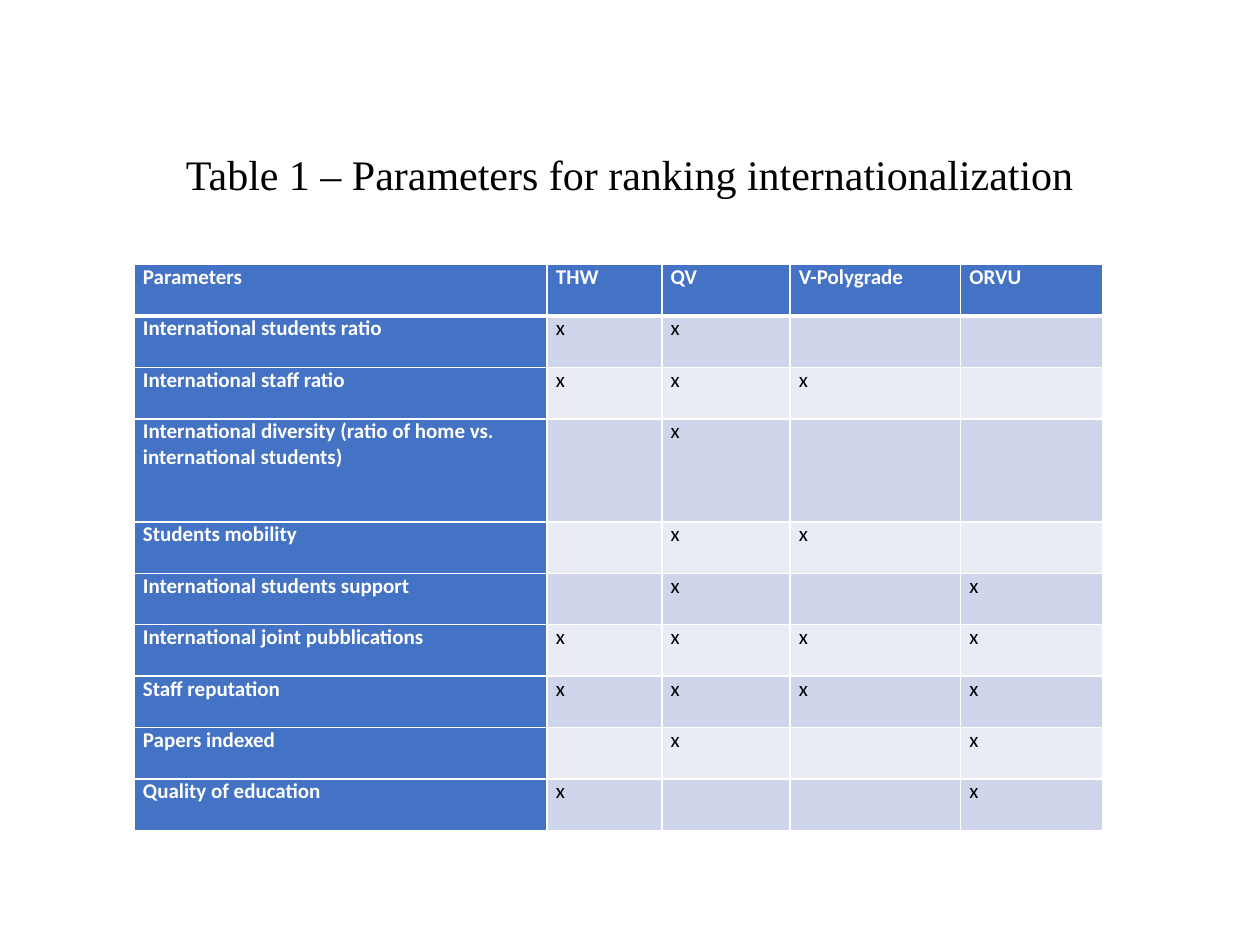
from dataclasses import dataclass

from lxml.etree import SubElement
from pptx import Presentation
from pptx.dml.color import RGBColor
from pptx.enum.text import MSO_ANCHOR, PP_ALIGN
from pptx.oxml.ns import qn
from pptx.table import _Cell as Cell
from pptx.text.text import _Paragraph as Para
from pptx.util import Pt

COLORS = {
    "head": "4472C4",
    "dark": "CFD5EA",
    "light": "E9EBF5",
    "white": "FFFFFF",
    "black": "000000",
}
HEADS = ["Parameters", "THW", "QV", "V-Polygrade", "ORVU"]
WIDTHS = [236, 65.5, 73.4, 97.4, 81]
UNIT = 29.4


@dataclass
class Row:
    label: str
    marks: str
    units: int = 1


ROWS = [
    Row("International students ratio", "xx--"),
    Row("International staff ratio", "xxx-"),
    Row("International diversity (ratio of home vs. international students)", "-x--", 2),
    Row("Students mobility", "-xx-"),
    Row("International students support", "-x-x"),
    Row("International joint pubblications", "xxxx"),
    Row("Staff reputation", "xxxx"),
    Row("Papers indexed", "-x-x"),
    Row("Quality of education", "x--x"),
]


def color(name: str) -> RGBColor:
    return RGBColor.from_string(COLORS[name])


def write(para: Para, text: str, font: str, size: float, tone: str, bold: bool = False) -> None:
    run = para.add_run()
    run.text = text
    run.font.name = font
    run.font.size = Pt(size)
    run.font.bold = bold
    run.font.color.rgb = color(tone)


def edge(cell: Cell, top: float, base: float) -> None:
    props = cell._tc.get_or_add_tcPr()
    for side, width in (("L", 1), ("R", 1), ("T", top), ("B", base)):
        line = SubElement(props, qn(f"a:ln{side}"), w=str(Pt(width)))
        fill = SubElement(line, qn("a:solidFill"))
        SubElement(fill, qn("a:srgbClr"), val=COLORS["white"])


def draw_cell(cell: Cell, text: str, row: int, col: int) -> None:
    edge(cell, 3 if row == 1 else 1, 3 if row == 0 else 1)
    key = row == 0 or col == 0
    band = "dark" if row % 2 else "light"
    cell.fill.solid()
    cell.fill.fore_color.rgb = color("head" if key else band)
    cell.margin_left = cell.margin_right = Pt(5)
    cell.margin_top = cell.margin_bottom = Pt(0)
    para = cell.text_frame.paragraphs[0]
    if text:
        write(para, text, "Calibri", 12, "white" if key else "black", key)
    else:
        para.font.size = Pt(12)


def main() -> None:
    deck = Presentation()
    deck.slide_width, deck.slide_height = Pt(720), Pt(540)
    slide = deck.slides.add_slide(deck.slide_layouts[6])

    title = slide.shapes.add_textbox(Pt(90), Pt(88.5), Pt(540), Pt(29)).text_frame
    title.word_wrap = True
    title.vertical_anchor = MSO_ANCHOR.BOTTOM
    para = title.paragraphs[0]
    para.alignment = PP_ALIGN.CENTER
    para.line_spacing = 0.9
    write(para, "Table 1 – Parameters for ranking internationalization",
          "Times New Roman", 24, "black")

    units = [1] + [row.units for row in ROWS]
    frame = slide.shapes.add_table(len(units), len(HEADS), Pt(76.7), Pt(151.2),
                                   Pt(sum(WIDTHS)), Pt(UNIT * sum(units)))
    table = frame.table
    for col, width in zip(table.columns, WIDTHS):
        col.width = Pt(width)
    for row, count in zip(table.rows, units):
        row.height = Pt(UNIT * count)
    grid = [HEADS] + [[row.label, *row.marks.replace("-", " ")] for row in ROWS]
    for r, texts in enumerate(grid):
        for c, text in enumerate(texts):
            draw_cell(table.cell(r, c), text.strip(), r, c)

    deck.save("out.pptx")


if __name__ == "__main__":
    main()
